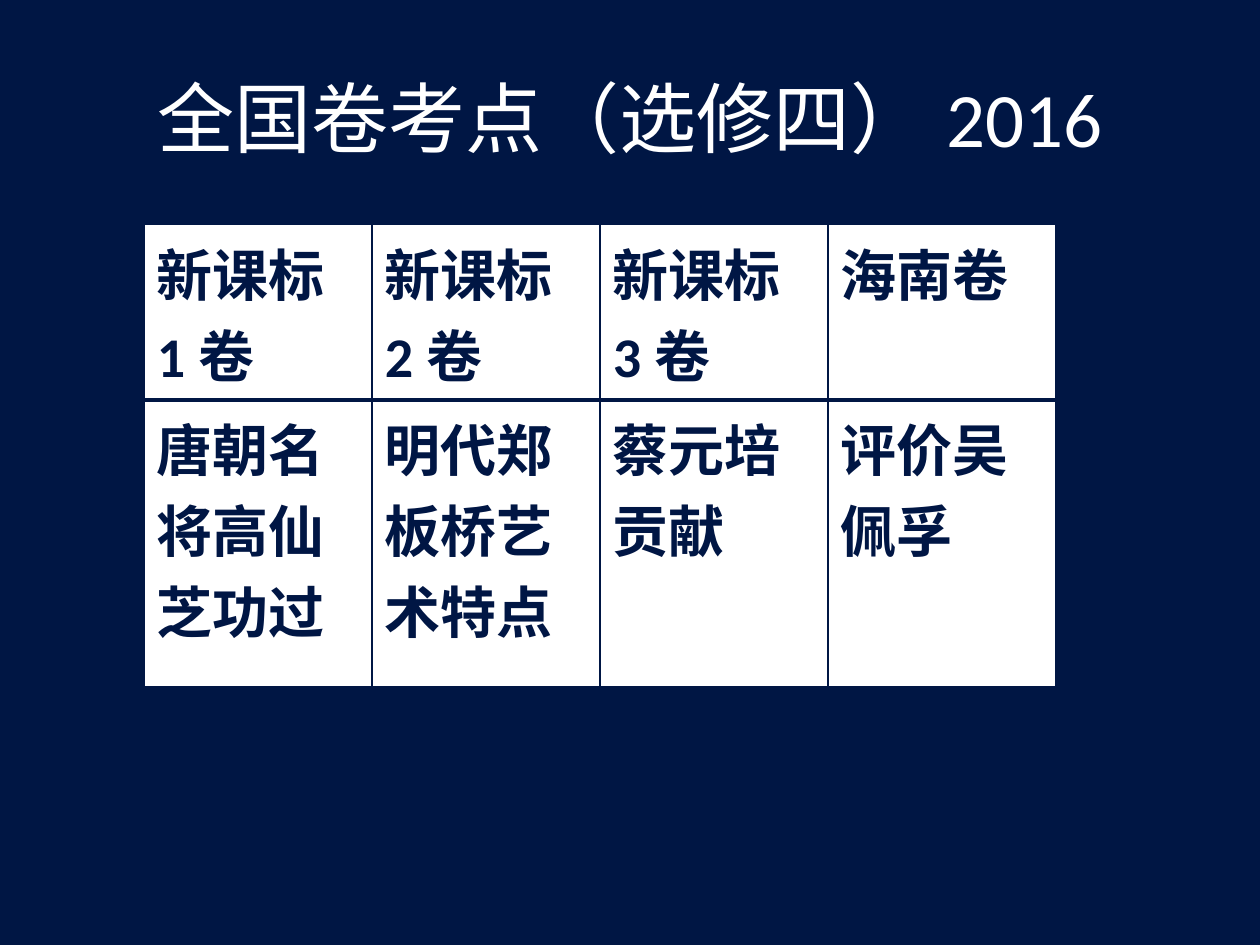
from pptx import Presentation
from pptx.dml.color import RGBColor
from pptx.enum.text import MSO_ANCHOR, PP_ALIGN
from pptx.oxml import parse_xml
from pptx.oxml.ns import nsdecls
from pptx.util import Pt

NAVY = "001644"
WHITE = "FFFFFF"
EXAM_TOPICS = [
    ["新课标1卷", "新课标2卷", "新课标3卷", "海南卷"],
    ["唐朝名将高仙芝功过", "明代郑板桥艺术特点", "蔡元培贡献", "评价吴佩孚"],
]
ROW_HEIGHTS = [85.5, 164]
COLUMN_WIDTH = 130.3


def color(value):
    return RGBColor.from_string(value)


def set_borders(cell, widths):
    """Draw solid navy cell borders; widths maps L, R, T, B to points."""
    properties = cell._tc.get_or_add_tcPr()
    for position, (side, width) in enumerate(widths.items()):
        properties.insert(position, parse_xml(
            f'<a:ln{side} {nsdecls("a")} w="{Pt(width)}"><a:solidFill>'
            f'<a:srgbClr val="{NAVY}"/></a:solidFill></a:ln{side}>'))


presentation = Presentation()
presentation.slide_width, presentation.slide_height = Pt(720), Pt(540)
slide = presentation.slides.add_slide(presentation.slide_layouts[5])
slide.background.fill.solid()
slide.background.fill.fore_color.rgb = color(NAVY)

# Title
title = slide.shapes.title
title_place = {"left": 36, "top": 21.6, "width": 648, "height": 90}
for name, value in title_place.items():
    setattr(title, name, Pt(value))
title.text_frame.text = "全国卷考点（选修四）2016"
title.text_frame.vertical_anchor = MSO_ANCHOR.MIDDLE
paragraph = title.text_frame.paragraphs[0]
paragraph.alignment = PP_ALIGN.CENTER
for name, value in {"name": "Calibri", "size": Pt(44)}.items():
    setattr(paragraph.font, name, value)
paragraph.font.color.rgb = color(WHITE)

# Table of exam papers and their topics
table = slide.shapes.add_table(
    len(EXAM_TOPICS), len(EXAM_TOPICS[0]), Pt(82.4), Pt(128.4),
    Pt(COLUMN_WIDTH * len(EXAM_TOPICS[0])), Pt(sum(ROW_HEIGHTS))).table
table.horz_banding = False
for column in table.columns:
    column.width = Pt(COLUMN_WIDTH)

cell_font = {"name": "Calibri", "size": Pt(32), "bold": True}
row_borders = [
    {"L": 1, "R": 1, "T": 1, "B": 3},
    {"L": 1, "R": 1, "T": 3, "B": 1},
]
for row_index, texts in enumerate(EXAM_TOPICS):
    table.rows[row_index].height = Pt(ROW_HEIGHTS[row_index])
    for column_index, text in enumerate(texts):
        cell = table.cell(row_index, column_index)
        cell.text = text
        cell.fill.solid()
        cell.fill.fore_color.rgb = color(WHITE)
        set_borders(cell, row_borders[row_index])
        font = cell.text_frame.paragraphs[0].font
        for name, value in cell_font.items():
            setattr(font, name, value)
        font.color.rgb = color(NAVY)

presentation.save("out.pptx")
